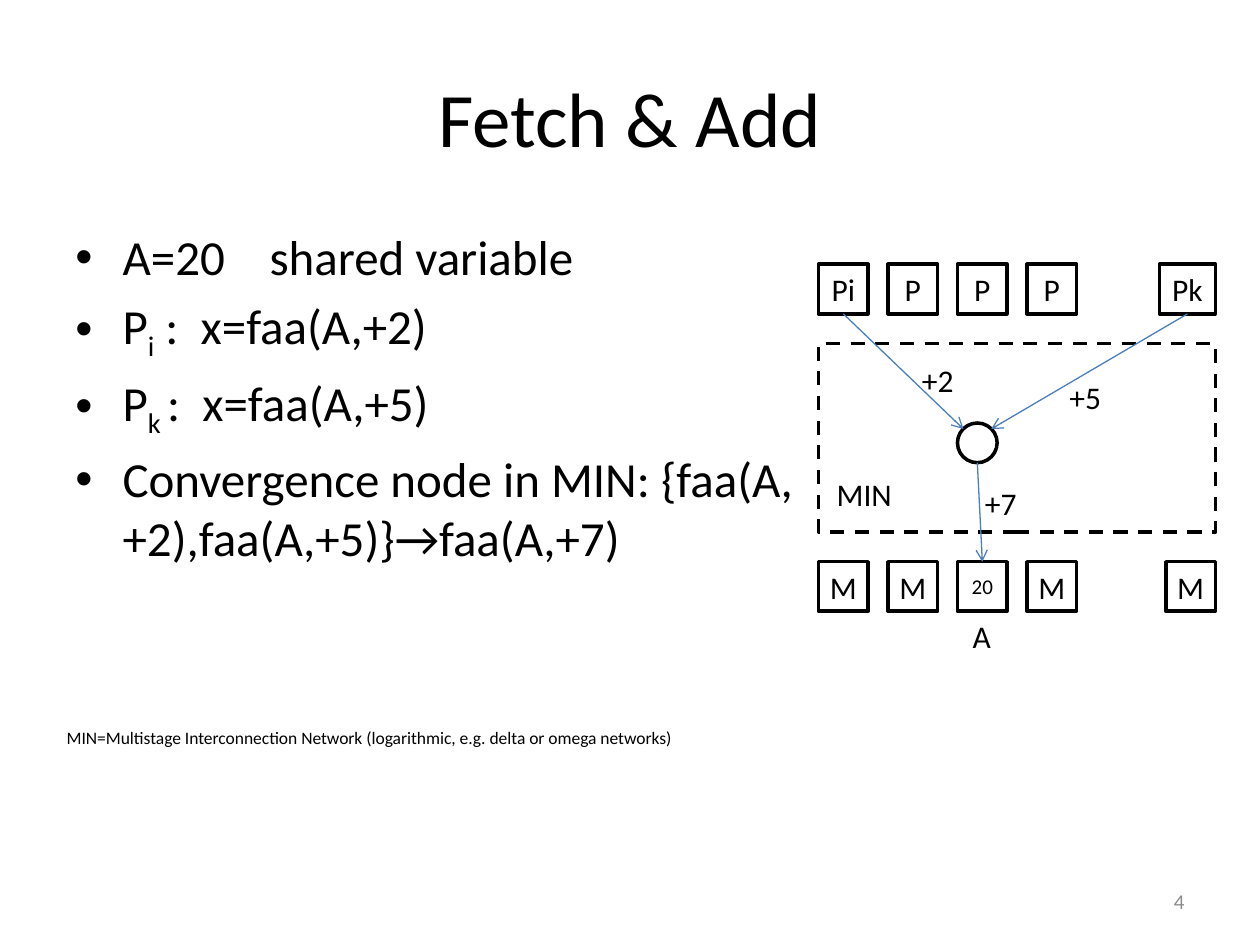
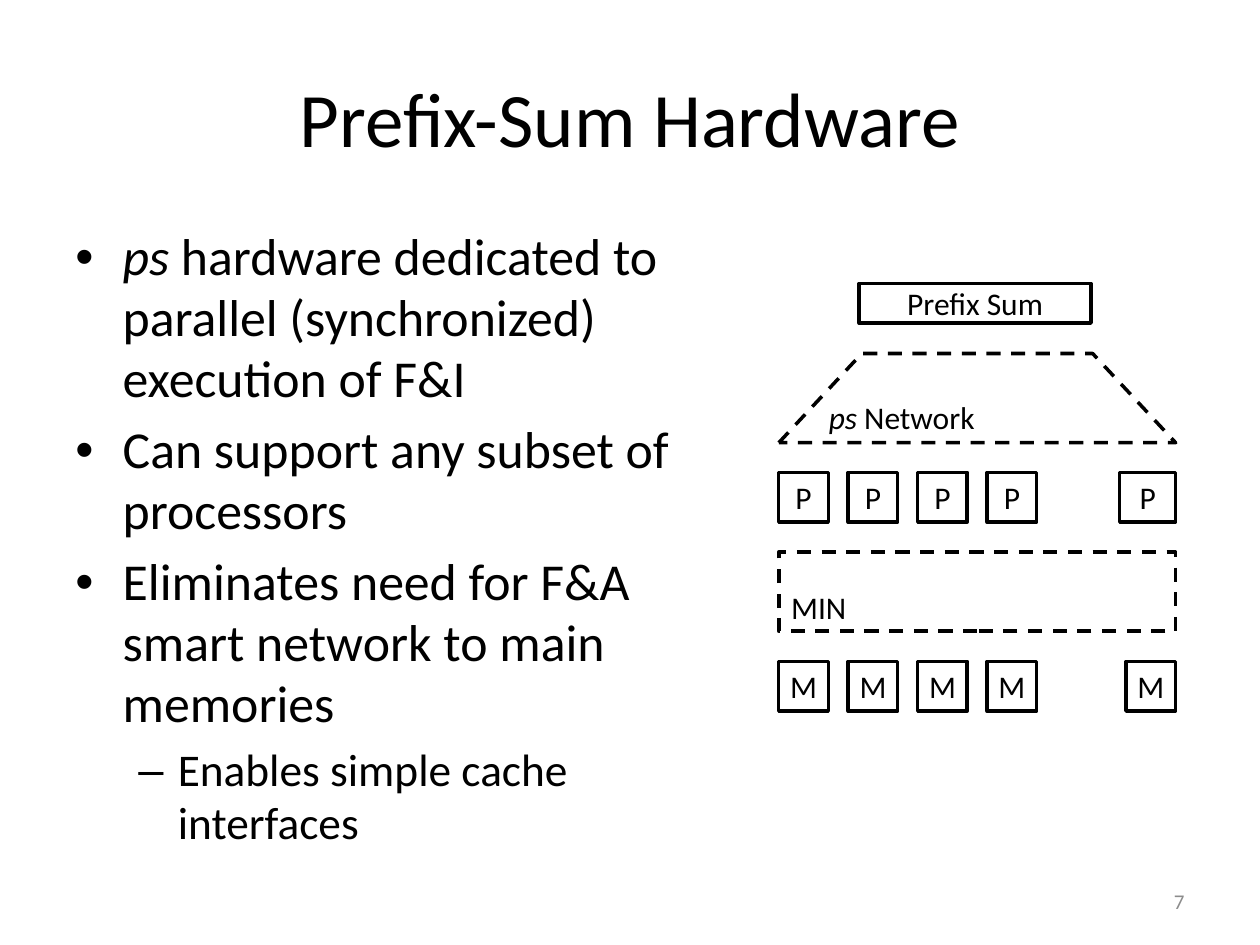
import dataclasses

import lxml.etree
import pptx
import pptx.dml.color
import pptx.enum.dml
import pptx.enum.shapes
import pptx.enum.text
import pptx.oxml.ns
import pptx.util

Pt = pptx.util.Pt
Align = pptx.enum.text.PP_ALIGN
Anchor = pptx.enum.text.MSO_ANCHOR
Preset = pptx.enum.shapes.MSO_SHAPE
qn = pptx.oxml.ns.qn


@dataclasses.dataclass(frozen=True)
class Theme:
    font: str = "Calibri"
    ink: str = "000000"
    muted: str = "8C8C8C"
    arrow: str = "4B7EBC"
    title_size: float = 44
    label_size: float = 18
    small_size: float = 12
    note_size: float = 10
    outline: float = 2
    arrow_width: float = 0.75


THEME = Theme()

# Measures of the processor and memory diagrams, in points
BOX = 28.35
WIDE_BOX = 32
PITCH = 39.7
NETWORK_WIDTH = 226.8
LABEL_HEIGHT = 29
NODE = 22.68

# Bullet character, left margin and hanging indent for each level
BULLETS = (("•", 27, -27), ("–", 58.5, -22.5))


def rgb(value):
    return pptx.dml.color.RGBColor.from_string(value)


def format_run(run, size, color=THEME.ink):
    run.font.name = THEME.font
    run.font.size = Pt(size)
    run.font.color.rgb = rgb(color)


def fill_paragraph(paragraph, parts, size, color=THEME.ink):
    """Write parts: plain strings, or (text, "italic" or "subscript")."""
    for part in parts:
        text, style = (part, None) if isinstance(part, str) else part
        run = paragraph.add_run()
        run.text = text
        format_run(run, size, color)
        if style == "italic":
            run.font.italic = True
        elif style == "subscript":
            run.font.element.set("baseline", "-25000") if hasattr(run.font, "element") \
                else run._r.get_or_add_rPr().set("baseline", "-25000")


def set_bullet(paragraph, level, tab=None):
    character, margin, indent = BULLETS[level]
    paragraph.level = level
    properties = paragraph._p.get_or_add_pPr()
    properties.set("marL", str(Pt(margin)))
    properties.set("indent", str(Pt(indent)))
    lxml.etree.SubElement(properties, qn("a:buFont"), typeface="Arial")
    lxml.etree.SubElement(properties, qn("a:buChar"), char=character)
    if tab:
        tab_list = lxml.etree.SubElement(properties, qn("a:tabLst"))
        lxml.etree.SubElement(tab_list, qn("a:tab"), pos=str(Pt(tab)), algn="l")


def add_title_slide(presentation, title, number):
    slide = presentation.slides.add_slide(presentation.slide_layouts[5])
    shape = slide.shapes.title
    shape.left, shape.top, shape.width, shape.height = Pt(36), Pt(21.6), Pt(648), Pt(90)
    shape.text_frame.text = title
    shape.text_frame.vertical_anchor = Anchor.MIDDLE
    paragraph = shape.text_frame.paragraphs[0]
    paragraph.alignment = Align.CENTER
    format_run(paragraph.runs[0], THEME.title_size)

    # Slide number
    frame = slide.shapes.add_textbox(Pt(516), Pt(500.5), Pt(168), Pt(28.75)).text_frame
    frame.word_wrap = True
    frame.vertical_anchor = Anchor.MIDDLE
    frame.text = number
    frame.paragraphs[0].alignment = Align.RIGHT
    format_run(frame.paragraphs[0].runs[0], THEME.small_size, THEME.muted)
    return slide


def add_bullets(slide, width, items, sizes, line_spacing=1.0, tab=None):
    """Write items of (level, parts); sizes holds one type size per level."""
    frame = slide.shapes.add_textbox(Pt(36), Pt(126), Pt(width), Pt(356.4)).text_frame
    frame.word_wrap = True
    for index, (level, parts) in enumerate(items):
        paragraph = frame.add_paragraph() if index else frame.paragraphs[0]
        paragraph.space_before = Pt(0.2 * sizes[level])
        paragraph.line_spacing = line_spacing
        has_tab = any("\t" in part for part in parts)
        set_bullet(paragraph, level, tab if has_tab else None)
        fill_paragraph(paragraph, parts, sizes[level])


def add_outline(slide, preset, left, top, width, height, text="",
                size=THEME.label_size, dashed=False):
    shape = slide.shapes.add_shape(preset, Pt(left), Pt(top), Pt(width), Pt(height))
    shape.shadow.inherit = False
    shape.fill.background()
    shape.line.color.rgb = rgb(THEME.ink)
    shape.line.width = Pt(THEME.outline)
    if dashed:
        shape.line.dash_style = pptx.enum.dml.MSO_LINE.DASH
    if text:
        frame = shape.text_frame
        frame.margin_left = frame.margin_right = 0
        frame.margin_top = frame.margin_bottom = 0
        frame.vertical_anchor = Anchor.MIDDLE
        frame.text = text
        frame.paragraphs[0].alignment = Align.CENTER
        format_run(frame.paragraphs[0].runs[0], size)
    return shape


def add_unit_row(slide, left, top, labels, last_width=BOX):
    """Place boxes at an equal pitch, the last one flush with the network's right."""
    boxes = []
    for index, label in enumerate(labels):
        is_last = index == len(labels) - 1
        width = last_width if is_last else BOX
        offset = NETWORK_WIDTH - width if is_last else index * PITCH
        size = THEME.small_size if label.isdigit() else THEME.label_size
        boxes.append(add_outline(slide, Preset.RECTANGLE, left + offset, top,
                                 width, BOX, label, size))
    return boxes


def add_label(slide, left, top, width, parts, size=THEME.label_size, height=LABEL_HEIGHT):
    frame = slide.shapes.add_textbox(Pt(left), Pt(top), Pt(width), Pt(height)).text_frame
    frame.word_wrap = False
    frame.auto_size = pptx.enum.text.MSO_AUTO_SIZE.SHAPE_TO_FIT_TEXT
    fill_paragraph(frame.paragraphs[0], parts, size)


def add_arrow(slide, start, end, source=None, target=None):
    """Draw an arrow; source joins at its bottom side, target at its top side."""
    connector = slide.shapes.add_connector(
        pptx.enum.shapes.MSO_CONNECTOR.STRAIGHT, *(Pt(value) for value in (*start, *end)))
    if source is not None:
        connector.begin_connect(source, 2)
    if target is not None:
        connector.end_connect(target, 0)
    connector.line.color.rgb = rgb(THEME.arrow)
    connector.line.width = Pt(THEME.arrow_width)
    properties = connector._element.spPr
    lxml.etree.SubElement(properties.find(qn("a:ln")), qn("a:tailEnd"), type="arrow")
    lxml.etree.SubElement(properties, qn("a:effectLst"))


def build_fetch_and_add(presentation):
    slide = add_title_slide(presentation, "Fetch & Add", "4")
    add_bullets(slide, 426, [
        (0, ["A=20\tshared variable"]),
        (0, ["P", ("i", "subscript"), " :  x=faa(A,+2)"]),
        (0, ["P", ("k ", "subscript"), ":  x=faa(A,+5)"]),
        (0, ["Convergence node in MIN: {faa(A,+2),faa(A,+5)}→faa(A,+7)"]),
    ], sizes=(28,), tab=111)

    # Processors, network and memories
    left, processor_top, memory_top = 467.75, 151, 321
    processors = add_unit_row(slide, left, processor_top, ["Pi", "P", "P", "P", "Pk"], WIDE_BOX)
    memories = add_unit_row(slide, left, memory_top, ["M", "M", "20", "M", "M"])
    add_outline(slide, Preset.RECTANGLE, left, 196.4, NETWORK_WIDTH, 107.75, dashed=True)

    # Convergence node with its arrows
    node_left, node_top = left + 2 * PITCH, 241.75
    add_outline(slide, Preset.OVAL, node_left, node_top, NODE, NODE)
    center = node_left + NODE / 2
    corner = 0.15 * NODE
    processor_bottom = processor_top + BOX
    add_arrow(slide, (left + BOX / 2, processor_bottom),
              (node_left + corner, node_top + corner), source=processors[0])
    add_arrow(slide, (left + NETWORK_WIDTH - WIDE_BOX / 2, processor_bottom),
              (node_left + NODE - corner, node_top + corner), source=processors[-1])
    add_arrow(slide, (center, node_top + NODE),
              (node_left + BOX / 2, memory_top), target=memories[2])

    # Labels
    for text, label_left, label_top, width in (
            ("+2", 519.75, 202.5, 33), ("+5", 604, 212.75, 33), ("+7", 555.75, 273, 33),
            ("A", 548.75, 349.25, 25), ("MIN", 471, 268, 46)):
        add_label(slide, label_left, label_top, width, [text])
    add_label(slide, 31, 412, 366.5,
              ["MIN=Multistage Interconnection Network (logarithmic, e.g. delta or omega networks)"],
              THEME.note_size, 19.4)


def build_prefix_sum(presentation):
    slide = add_title_slide(presentation, "Prefix-Sum Hardware", "7")
    add_bullets(slide, 381, [
        (0, [("ps", "italic"), " hardware dedicated to parallel (synchronized) execution of F&I"]),
        (0, ["Can support any subset of processors"]),
        (0, ["Eliminates need for F&A smart network to main memories"]),
        (1, ["Enables simple cache interfaces"]),
    ], sizes=(29.6, 25.9), line_spacing=0.98)

    # Prefix-sum unit and its network
    left = 445
    add_outline(slide, Preset.RECTANGLE, left + 46, 162, 132.5, 22.68, "Prefix Sum")
    funnel = add_outline(slide, Preset.TRAPEZOID, left, 202, NETWORK_WIDTH, 51, dashed=True)
    funnel.adjustments[0] = 0.93
    add_label(slide, 466.5, 224, 98.5, [("ps", "italic"), " Network"])

    # Processors, network and memories
    add_unit_row(slide, left, 270, ["P"] * 5, WIDE_BOX)
    add_outline(slide, Preset.RECTANGLE, left, 315.4, NETWORK_WIDTH, 45.35, dashed=True)
    add_label(slide, left, 332.5, 46, ["MIN"])
    add_unit_row(slide, left, 378, ["M"] * 5)


def main():
    presentation = pptx.Presentation()
    presentation.slide_width, presentation.slide_height = Pt(720), Pt(540)
    build_fetch_and_add(presentation)
    build_prefix_sum(presentation)
    presentation.save("out.pptx")


if __name__ == "__main__":
    main()
